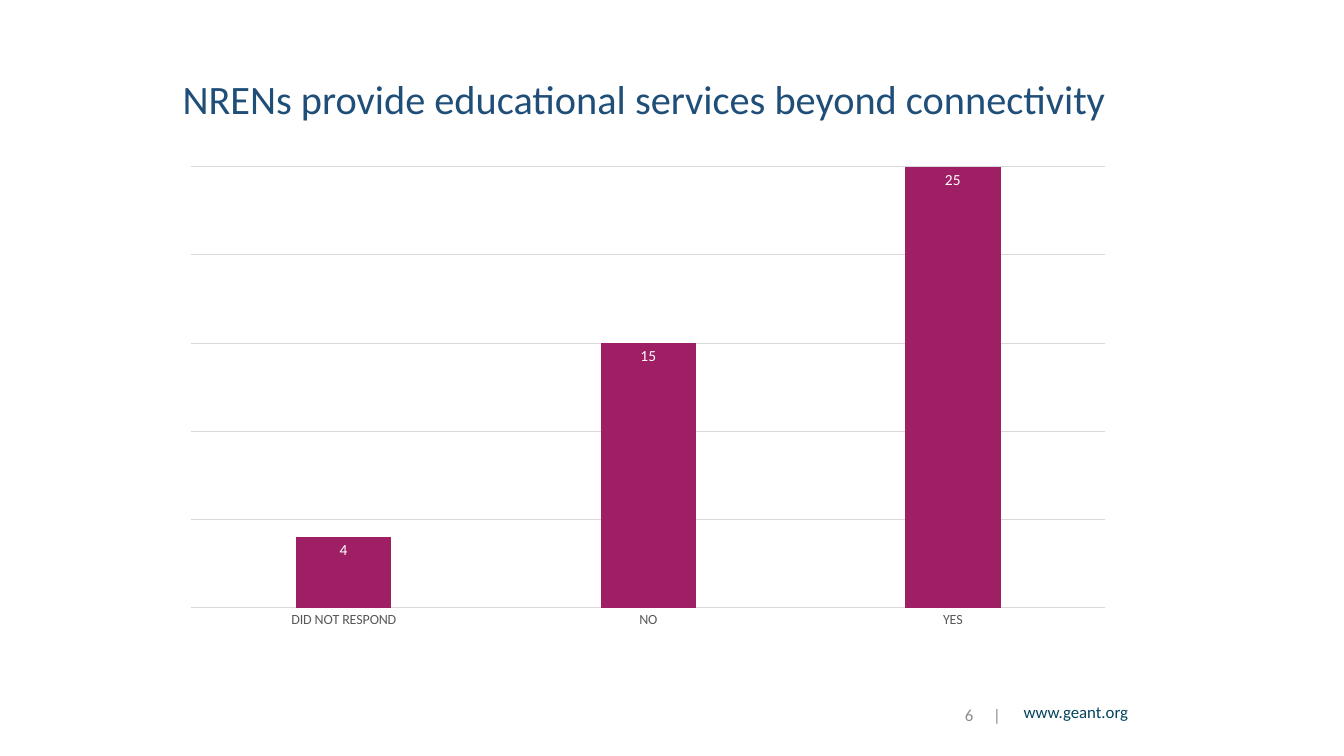
import pptx
import pptx.chart.data
import pptx.dml.color
import pptx.enum.chart
import pptx.enum.text
import pptx.oxml
import pptx.oxml.ns
import pptx.util

WIDTH = pptx.util.Inches(13.33)
HEIGHT = pptx.util.Inches(7.5)
FONT = "Calibri"
TITLE_BLUE = pptx.dml.color.RGBColor(0x1F, 0x4E, 0x79)
LINK_BLUE = pptx.dml.color.RGBColor(0x03, 0x43, 0x5F)
NUMBER_GREY = pptx.dml.color.RGBColor(0x8C, 0x8C, 0x8C)
LABEL_GREY = pptx.dml.color.RGBColor(0x59, 0x59, 0x59)
GRID_GREY = pptx.dml.color.RGBColor(0xD9, 0xD9, 0xD9)
BAR_PURPLE = pptx.dml.color.RGBColor(0x9E, 0x1F, 0x63)
WHITE = pptx.dml.color.RGBColor(0xFF, 0xFF, 0xFF)
ANSWERS = {"DID NOT RESPOND": 4, "NO": 15, "YES": 25}
GRID_STEP = 5


def area(left, top, width, height):
    """Turn percentages of the slide into a left, top, width and height."""
    shares = ((left, WIDTH), (top, HEIGHT), (width, WIDTH), (height, HEIGHT))
    return [pptx.util.Emu(round(share * full / 100)) for share, full in shares]


def style_font(font, size, color):
    """Give a font the deck's typeface with a size and colour."""
    font.name = FONT
    font.size = pptx.util.Pt(size)
    font.color.rgb = color


def style_line(line):
    """Draw a thin grey chart line."""
    line.color.rgb = GRID_GREY
    line.width = pptx.util.Pt(0.75)


def set_title(page, text):
    """Fill and place the title placeholder."""
    title = page.shapes.title
    title.left, title.top, title.width, title.height = area(12.83, 10.27, 81.17, 6.27)
    frame = title.text_frame
    frame.text = text
    frame.word_wrap = True
    frame.auto_size = pptx.enum.text.MSO_AUTO_SIZE.NONE
    frame.vertical_anchor = pptx.enum.text.MSO_ANCHOR.MIDDLE
    para = frame.paragraphs[0]
    para.alignment = pptx.enum.text.PP_ALIGN.LEFT
    para.line_spacing = 0.9
    style_font(para.runs[0].font, 28.8, TITLE_BLUE)


def add_footer_text(page, place, text, color, align, anchor):
    """Add one line of footer text and return its box."""
    box = page.shapes.add_textbox(*place)
    frame = box.text_frame
    frame.word_wrap = True
    frame.vertical_anchor = anchor
    frame.text = text
    para = frame.paragraphs[0]
    para.alignment = align
    style_font(para.runs[0].font, 12, color)
    return box


def add_tab_stop(box, distance):
    """Add a left tab stop to a box's text."""
    properties = box.text_frame.paragraphs[0]._p.get_or_add_pPr()
    stops = pptx.oxml.parse_xml(
        f'<a:tabLst {pptx.oxml.ns.nsdecls("a")}><a:tab pos="{distance}" algn="l"/></a:tabLst>')
    properties.append(stops)


def add_answer_chart(page, place, answers):
    """Add the column chart of answer counts."""
    data = pptx.chart.data.CategoryChartData()
    data.categories = list(answers)
    data.add_series("Series 1", list(answers.values()))
    kind = pptx.enum.chart.XL_CHART_TYPE.COLUMN_CLUSTERED
    chart = page.shapes.add_chart(kind, *place, data).chart
    chart.has_title = False
    chart.has_legend = False
    style_font(chart.font, 10, LABEL_GREY)

    counts = chart.value_axis
    counts.minimum_scale = 0
    counts.maximum_scale = max(answers.values())
    counts.major_unit = GRID_STEP
    counts.visible = False
    style_line(counts.major_gridlines.format.line)

    names = chart.category_axis
    names.major_tick_mark = pptx.enum.chart.XL_TICK_MARK.NONE
    style_font(names.tick_labels.font, 10, LABEL_GREY)
    style_line(names.format.line)

    plot = chart.plots[0]
    plot.vary_by_categories = False
    plot.gap_width = 219
    plot.overlap = -27
    bars = plot.series[0]
    bars.format.fill.solid()
    bars.format.fill.fore_color.rgb = BAR_PURPLE
    labels = bars.data_labels
    labels.show_value = True
    labels.position = pptx.enum.chart.XL_LABEL_POSITION.INSIDE_END
    style_font(labels.font, 11, WHITE)


def main():
    """Build the slide and save the deck."""
    deck = pptx.Presentation()
    deck.slide_width, deck.slide_height = WIDTH, HEIGHT
    page = deck.slides.add_slide(deck.slide_layouts[5])
    align, anchor = pptx.enum.text.PP_ALIGN, pptx.enum.text.MSO_ANCHOR

    add_footer_text(page, area(72.09, 92.13, 12.6, 4.8), "www.geant.org",
                    LINK_BLUE, align.RIGHT, anchor.TOP)
    set_title(page, "NRENs provide educational services beyond connectivity")
    number = add_footer_text(page, area(69.69, 92.13, 5.48, 4.8), "6\t|",
                             NUMBER_GREY, align.LEFT, anchor.MIDDLE)
    number.text_frame.margin_left = pptx.util.Inches(0.28)
    number.text_frame.margin_right = 0
    add_tab_stop(number, pptx.util.Inches(0.28))
    add_answer_chart(page, area(12.83, 20.8, 70.82, 63.47), ANSWERS)
    deck.save("out.pptx")


if __name__ == "__main__":
    main()
